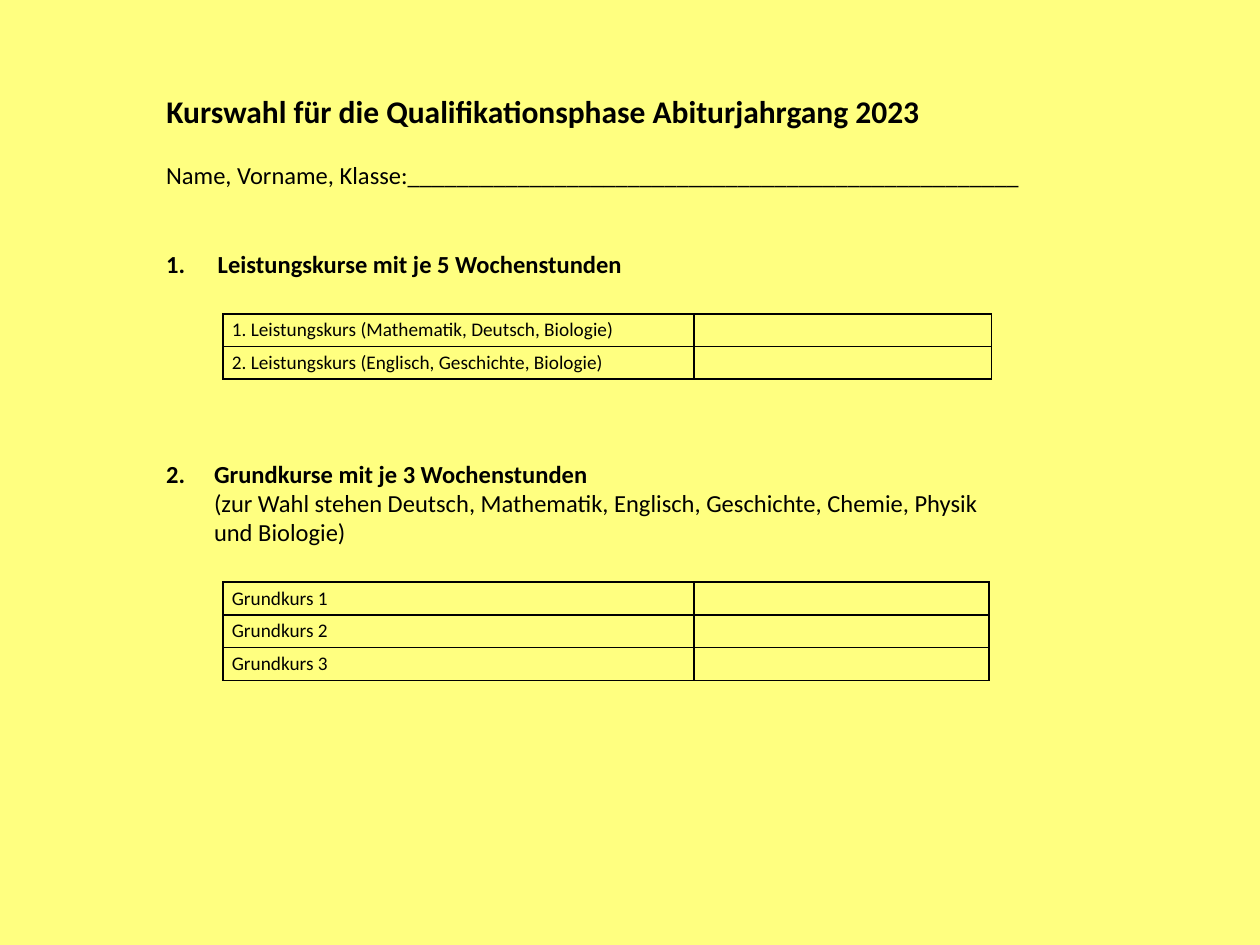
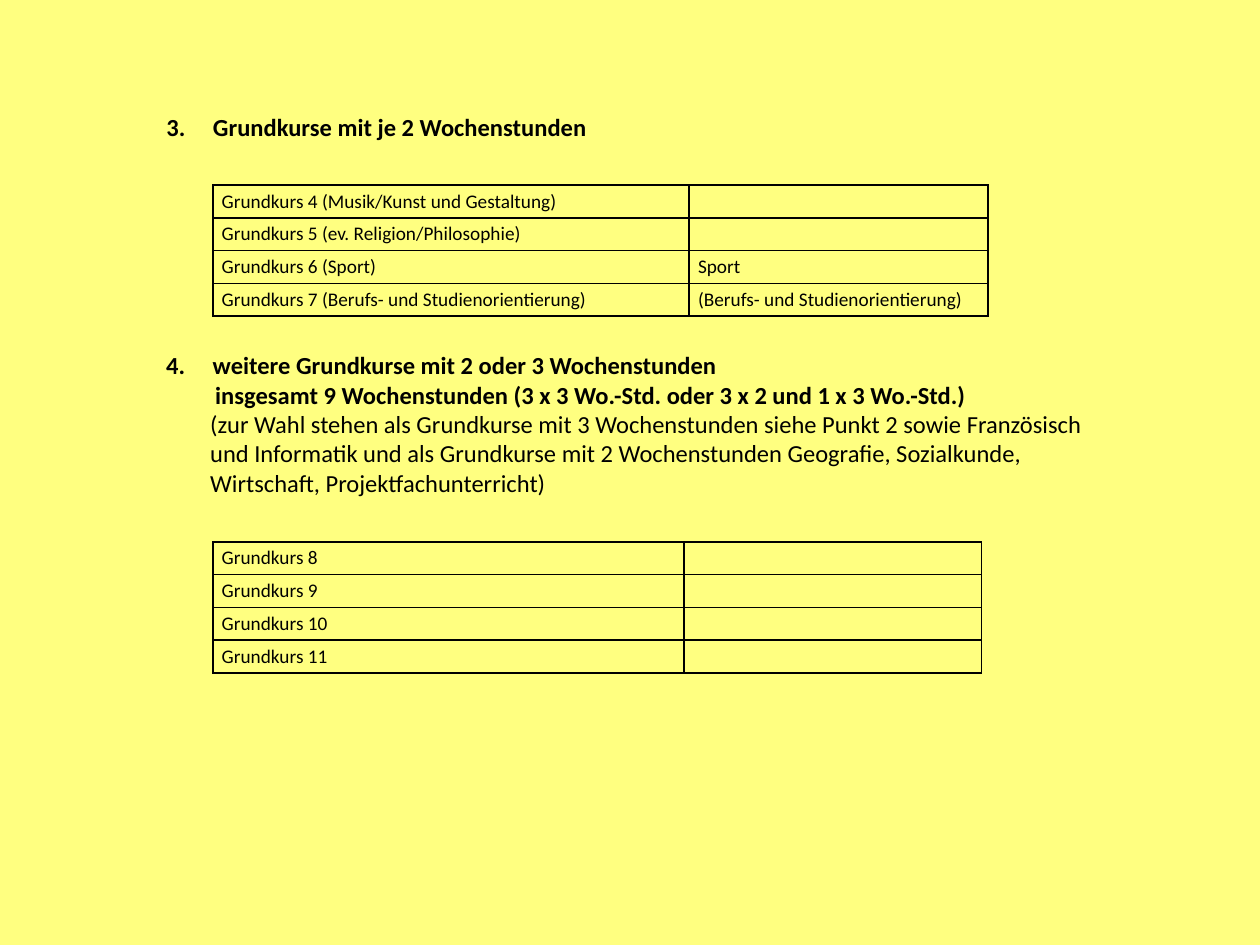
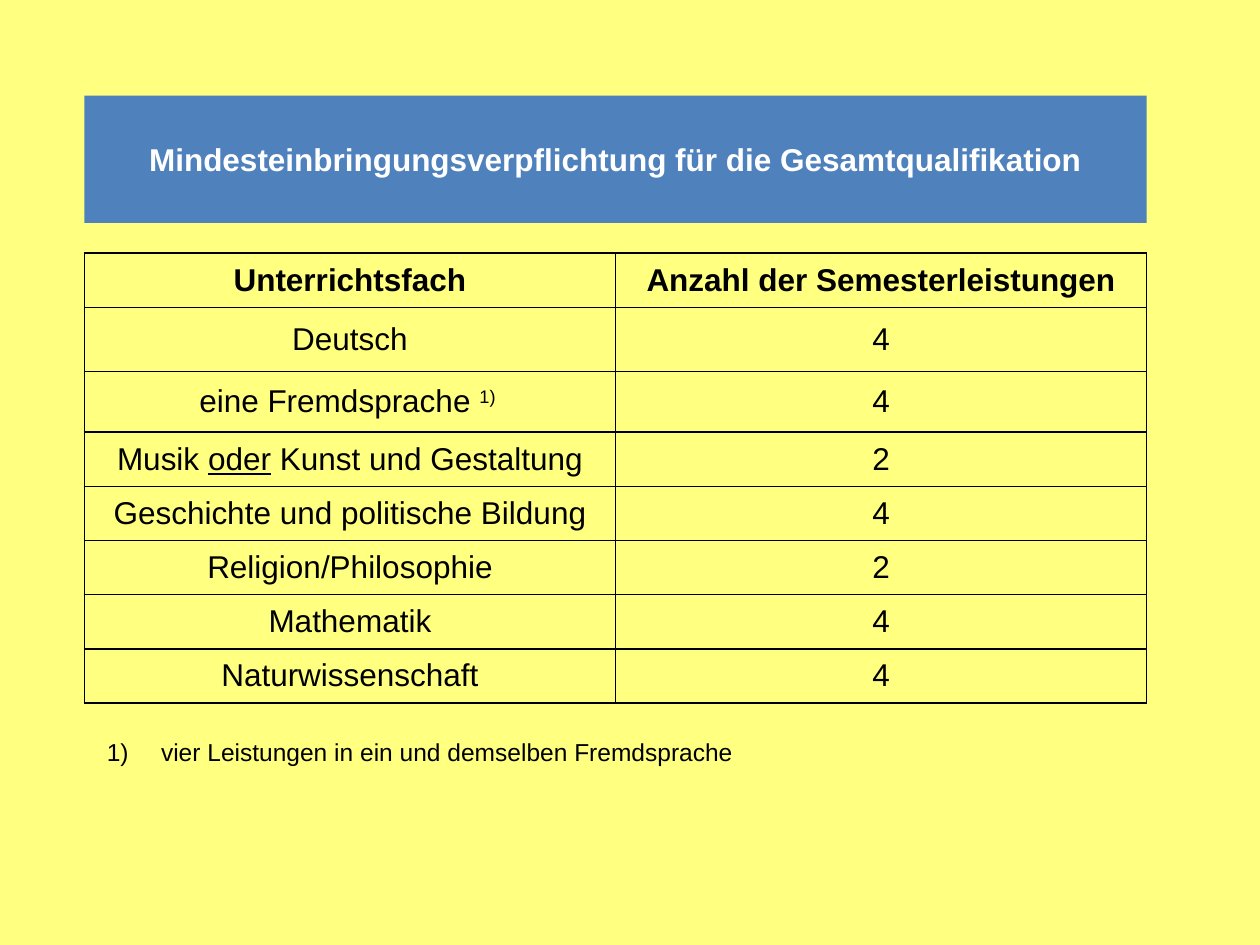
from lxml import etree
from pptx import Presentation
from pptx.dml.color import RGBColor
from pptx.enum.text import MSO_ANCHOR, MSO_AUTO_SIZE, PP_ALIGN
from pptx.oxml.ns import qn
from pptx.util import Inches, Pt

COLORS = {"page": "FFFF80", "ink": "000000", "band": "4F81BD", "band_text": "FFFFFF"}
FORM_FONT, OVERVIEW_FONT = "Calibri", "Arial"
FORM_LEFT = 1.22
FORM_ROW = 0.26
INDENT = 0.37

# Each paragraph: text, format
FORM_PAGES = [
    {
        "title": ("Kurswahl für die Qualifikationsphase Abiturjahrgang 2023", {"size": 18, "bold": True}),
        "title_top": 0.68,
        "texts": [
            (1.22, 7.87, [("Name, Vorname, Klasse:" + "_" * 50, {})]),
            (1.93, 7.87, [("1.\tLeistungskurse mit je 5 Wochenstunden", {"bold": True, "hang": 0.41})]),
            (3.59, 6.69, [
                ("2.\tGrundkurse mit je 3 Wochenstunden", {"bold": True, "hang": 0.38}),
                ("(zur Wahl stehen Deutsch, Mathematik, Englisch, Geschichte, Chemie, "
                 "Physik und Biologie)", {"indent": 0.38}),
            ]),
        ],
        "tables": [
            (1.77, 2.49, (3.74, 2.36), [
                ("1. Leistungskurs (Mathematik, Deutsch, Biologie)", ""),
                ("2. Leistungskurs (Englisch, Geschichte, Biologie)", ""),
            ]),
            (1.77, 4.62, (3.74, 2.34), [(f"Grundkurs {number}", "") for number in range(1, 4)]),
        ],
    },
    {
        "title": ("3.\tGrundkurse mit je 2 Wochenstunden", {"bold": True, "hang": INDENT}),
        "title_top": 0.84,
        "texts": [
            (2.73, 7.6, [
                ("4.\tweitere Grundkurse mit 2 oder 3 Wochenstunden", {"bold": True, "hang": INDENT}),
                ("insgesamt 9 Wochenstunden (3 x 3 Wo.-Std. oder 3 x 2 und 1 x 3 Wo.-Std.)",
                 {"bold": True, "indent": 0.39}),
                ("(zur Wahl stehen als Grundkurse mit 3 Wochenstunden siehe Punkt 2 sowie "
                 "Französisch und Informatik und als Grundkurse mit 2 Wochenstunden Geografie, "
                 "Sozialkunde, Wirtschaft, Projektfachunterricht)", {"indent": 0.35}),
            ]),
        ],
        "tables": [
            (1.69, 1.47, (3.78, 2.37), [
                ("Grundkurs 4 (Musik/Kunst und Gestaltung)", ""),
                ("Grundkurs 5 (ev. Religion/Philosophie)", ""),
                ("Grundkurs 6 (Sport)", "Sport"),
                ("Grundkurs 7 (Berufs- und Studienorientierung)", "(Berufs- und Studienorientierung)"),
            ]),
            (1.69, 4.3, (3.74, 2.36), [(f"Grundkurs {number}", "") for number in range(8, 12)]),
        ],
    },
]

OVERVIEW_TITLE = "Mindesteinbringungsverpflichtung für die Gesamtqualifikation"
OVERVIEW_ROWS = [
    ("Unterrichtsfach", "Anzahl der Semesterleistungen"),
    ("Deutsch", "4"),
    ([("eine Fremdsprache ", {}), ("1) ", {"raised": True})], "4"),
    ([("Musik ", {}), ("oder", {"underline": True}), (" Kunst und Gestaltung", {})], "2"),
    ("Geschichte und politische Bildung", "4"),
    ("Religion/Philosophie", "2"),
    ("Mathematik", "4"),
    ("Naturwissenschaft", "4"),
]
OVERVIEW_HEIGHTS = [0.43, 0.51, 0.48] + [0.43] * 5
OVERVIEW_LEFT, OVERVIEW_WIDTH = 0.67, 8.43
FOOTNOTE = "1)\tvier Leistungen in ein und demselben Fremdsprache"


def write(para, text, size=14, font=FORM_FONT, color="ink", bold=False,
          align=PP_ALIGN.LEFT, indent=0, hang=0):
    """Fill a paragraph from a string or from (text, format) pairs; hang sets a hanging indent."""
    para.alignment = align
    properties = para._p.get_or_add_pPr()
    properties.set("marL", str(Inches(indent or hang)))
    properties.set("indent", str(-Inches(hang)))
    if not text:
        etree.SubElement(para._p, qn("a:endParaRPr"), sz=str(size * 100))
        return
    for words, extra in [(text, {})] if isinstance(text, str) else text:
        span = para.add_run()
        span.text = words
        span.font.size = Pt(size)
        span.font.name = font
        span.font.bold = bold
        span.font.color.rgb = RGBColor.from_string(COLORS[color])
        if extra.get("underline"):
            span.font.underline = True
        if extra.get("raised"):
            span._r.get_or_add_rPr().set("baseline", "30000")


def place_title(page, text, left, top, width, height, anchor=MSO_ANCHOR.TOP, **text_format):
    title = page.shapes.title
    title.left, title.top, title.width, title.height = map(Inches, (left, top, width, height))
    title.text_frame.auto_size = MSO_AUTO_SIZE.NONE
    title.text_frame.vertical_anchor = anchor
    write(title.text_frame.paragraphs[0], text, **text_format)
    return title


def add_text(page, left, top, width, paragraphs):
    box = page.shapes.add_textbox(*map(Inches, (left, top, width, 0.34)))
    frame = box.text_frame
    frame.word_wrap = True
    frame.auto_size = MSO_AUTO_SIZE.SHAPE_TO_FIT_TEXT
    for index, (text, text_format) in enumerate(paragraphs):
        para = frame.add_paragraph() if index else frame.paragraphs[0]
        write(para, text, **text_format)


def outline(cell):
    properties = cell._tc.get_or_add_tcPr()
    for side in ("lnL", "lnR", "lnT", "lnB"):
        line = etree.SubElement(properties, qn(f"a:{side}"), w=str(Pt(1)))
        fill = etree.SubElement(line, qn("a:solidFill"))
        etree.SubElement(fill, qn("a:srgbClr"), val=COLORS["ink"])


def add_grid(page, left, top, widths, heights, rows, inset, bold_header=False, **text_format):
    area = map(Inches, (left, top, sum(widths), sum(heights)))
    table = page.shapes.add_table(len(rows), len(widths), *area).table
    table.first_row = table.horz_banding = False
    for column, width in zip(table.columns, widths):
        column.width = Inches(width)
    for row_index, (row, height) in enumerate(zip(rows, heights)):
        table.rows[row_index].height = Inches(height)
        for column_index, text in enumerate(row):
            cell = table.cell(row_index, column_index)
            outline(cell)
            cell.fill.background()
            cell.vertical_anchor = MSO_ANCHOR.MIDDLE
            cell.margin_left = cell.margin_right = Inches(inset)
            cell.margin_top = cell.margin_bottom = 0
            write(cell.text_frame.paragraphs[0], text,
                  bold=bold_header and row_index == 0, **text_format)


def add_form_page(page, content):
    text, text_format = content["title"]
    place_title(page, text, FORM_LEFT, content["title_top"], 7.87, 0.42, **text_format)
    for top, width, paragraphs in content["texts"]:
        add_text(page, FORM_LEFT, top, width, paragraphs)
    for left, top, widths, rows in content["tables"]:
        add_grid(page, left, top, widths, [FORM_ROW] * len(rows), rows, 0.07, size=11)


def add_overview_page(page):
    band = place_title(page, OVERVIEW_TITLE, OVERVIEW_LEFT, 0.76, OVERVIEW_WIDTH, 1.01,
                       anchor=MSO_ANCHOR.MIDDLE, size=18, font=OVERVIEW_FONT,
                       color="band_text", bold=True, align=PP_ALIGN.CENTER)
    band.fill.solid()
    band.fill.fore_color.rgb = RGBColor.from_string(COLORS["band"])
    add_grid(page, OVERVIEW_LEFT, 2.01, [OVERVIEW_WIDTH / 2] * 2, OVERVIEW_HEIGHTS,
             OVERVIEW_ROWS, 0.05, bold_header=True, size=18, font=OVERVIEW_FONT,
             align=PP_ALIGN.CENTER)
    add_text(page, 0.75, 5.8, 8.74, [(FOOTNOTE, {"font": OVERVIEW_FONT, "hang": 0.43})])


def main():
    deck = Presentation()
    deck.slide_width, deck.slide_height = Inches(10), Inches(7.5)
    background = deck.slide_master.background.fill
    background.solid()
    background.fore_color.rgb = RGBColor.from_string(COLORS["page"])
    title_only = deck.slide_layouts[5]
    for content in FORM_PAGES:
        add_form_page(deck.slides.add_slide(title_only), content)
    add_overview_page(deck.slides.add_slide(title_only))
    deck.save("out.pptx")


if __name__ == "__main__":
    main()
